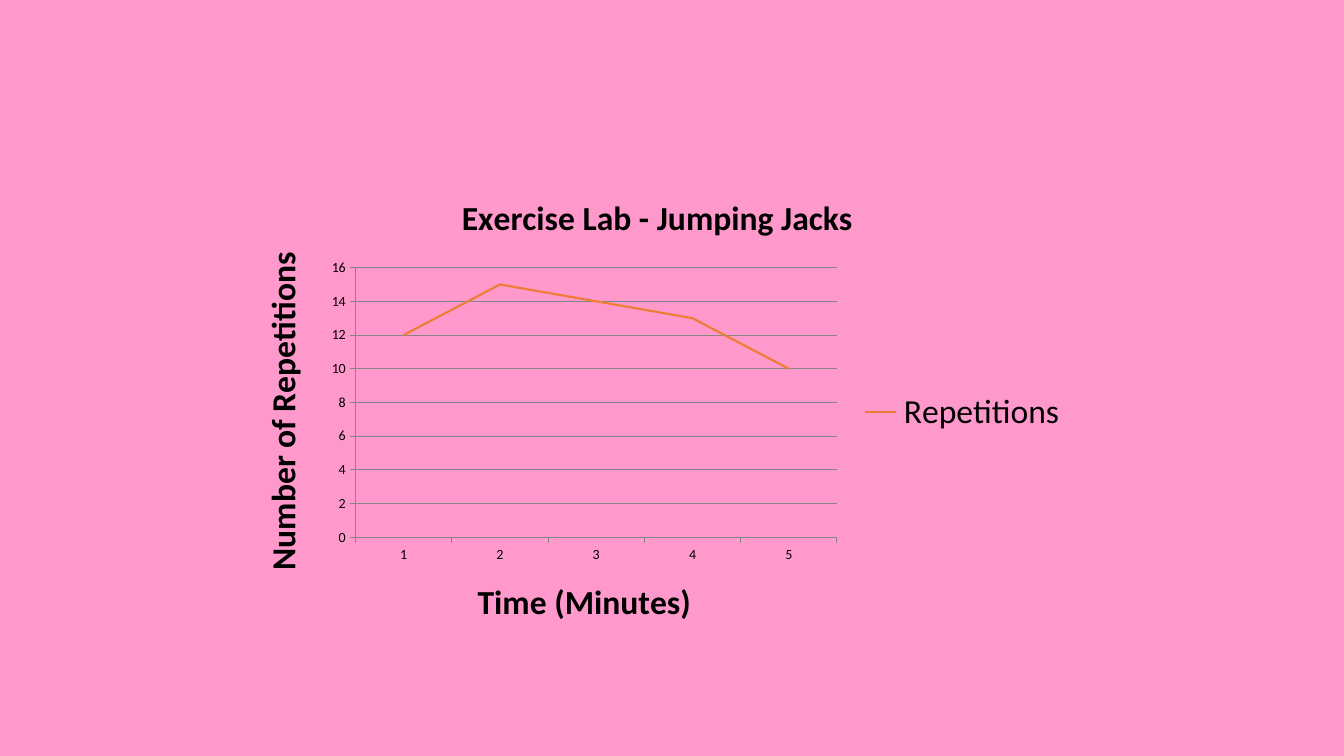
from dataclasses import dataclass

from pptx import Presentation
from pptx.chart.axis import _BaseAxis
from pptx.chart.data import CategoryChartData
from pptx.dml.color import RGBColor
from pptx.dml.line import LineFormat
from pptx.enum.chart import XL_CHART_TYPE, XL_LEGEND_POSITION, XL_MARKER_STYLE, XL_TICK_MARK
from pptx.text.text import Font, TextFrame
from pptx.util import Pt


@dataclass(frozen=True)
class Theme:
    background: RGBColor = RGBColor(0xFF, 0x99, 0xCC)
    text: RGBColor = RGBColor(0x00, 0x00, 0x00)
    grid: RGBColor = RGBColor(0x86, 0x86, 0x86)
    repetitions: RGBColor = RGBColor(0xED, 0x7D, 0x31)
    font: str = "Calibri"
    label_size: int = 10
    title_size: int = 24


@dataclass(frozen=True)
class AxisSpec:
    axis: _BaseAxis
    title: str
    gridlines: bool


THEME = Theme()


def set_font(font: Font, size: int, bold: bool = False) -> None:
    font.name = THEME.font
    font.size = Pt(size)
    font.bold = bold
    font.color.rgb = THEME.text


def set_title(tf: TextFrame, text: str) -> None:
    tf.text = text
    set_font(tf.paragraphs[0].font, THEME.title_size, bold=True)


def set_line(line: LineFormat, color: RGBColor, width: float) -> None:
    line.color.rgb = color
    line.width = Pt(width)


def format_axis(spec: AxisSpec) -> None:
    axis = spec.axis
    set_title(axis.axis_title.text_frame, spec.title)
    set_font(axis.tick_labels.font, THEME.label_size)
    axis.major_tick_mark = XL_TICK_MARK.OUTSIDE
    axis.minor_tick_mark = XL_TICK_MARK.NONE
    set_line(axis.format.line, THEME.grid, 0.75)
    axis.has_major_gridlines = spec.gridlines
    if spec.gridlines:
        set_line(axis.major_gridlines.format.line, THEME.grid, 0.75)


def main() -> None:
    prs = Presentation()
    prs.slide_width, prs.slide_height = Pt(960), Pt(540)
    s = prs.slides.add_slide(prs.slide_layouts[6])
    s.background.fill.solid()
    s.background.fill.fore_color.rgb = THEME.background

    data = CategoryChartData()
    data.categories = ["1", "2", "3", "4", "5"]
    data.add_series("Repetitions", (12, 15, 14, 13, 10))
    chart = s.shapes.add_chart(
        XL_CHART_TYPE.LINE, Pt(168.5), Pt(124.5), Pt(602), Pt(340), data
    ).chart
    set_font(chart.font, THEME.label_size)
    chart.has_title = True
    set_title(chart.chart_title.text_frame, "Exercise Lab - Jumping Jacks")
    chart.chart_title.include_in_layout = False

    chart.has_legend = True
    chart.legend.position = XL_LEGEND_POSITION.RIGHT
    chart.legend.include_in_layout = False
    set_font(chart.legend.font, THEME.title_size)

    for spec in (
        AxisSpec(chart.category_axis, "Time (Minutes)", False),
        AxisSpec(chart.value_axis, "Number of Repetitions", True),
    ):
        format_axis(spec)
    chart.value_axis.minimum_scale = 0
    chart.value_axis.maximum_scale = 16
    chart.value_axis.major_unit = 2

    plot = chart.plots[0]
    plot.vary_by_categories = False
    repetitions = plot.series[0]
    repetitions.smooth = False
    repetitions.marker.style = XL_MARKER_STYLE.NONE
    set_line(repetitions.format.line, THEME.repetitions, 1.5)

    prs.save("out.pptx")


if __name__ == "__main__":
    main()
